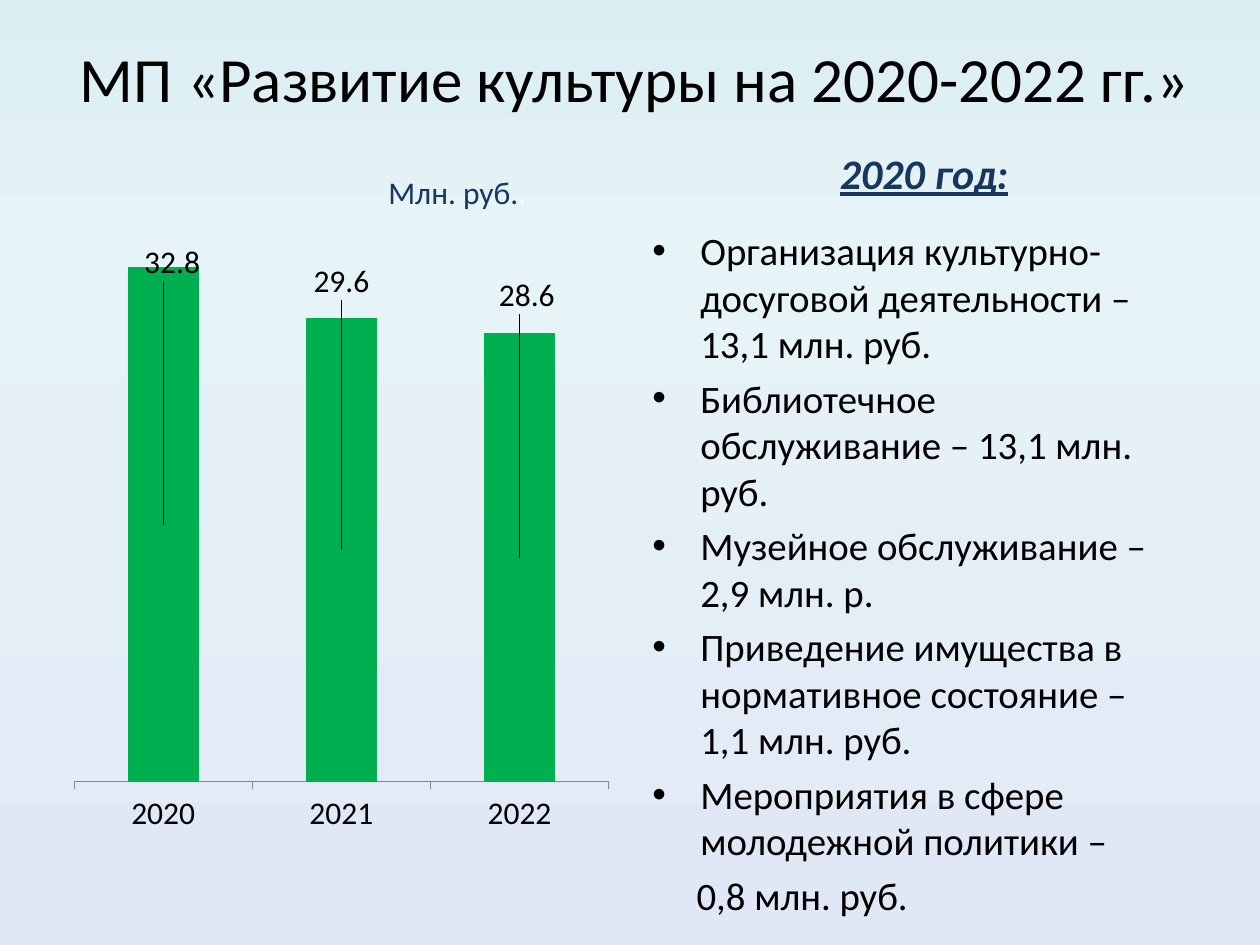
from lxml.etree import SubElement as Sub
from pptx import Presentation
from pptx.chart.data import CategoryChartData as Data
from pptx.dml.color import RGBColor as RGB
from pptx.enum.chart import XL_CHART_TYPE as Kind, XL_LABEL_POSITION as Pos
from pptx.enum.chart import XL_TICK_MARK as Tick
from pptx.enum.text import MSO_ANCHOR as Anchor, PP_ALIGN as Align
from pptx.oxml.ns import qn
from pptx.util import Inches, Pt

FONT = "Calibri"
BLACK = RGB(0x00, 0x00, 0x00)
WHITE = RGB(0xFF, 0xFF, 0xFF)
NAVY = RGB(0x17, 0x37, 0x5E)
GREEN = RGB(0x00, 0xB0, 0x50)
GRAY = RGB(0x86, 0x86, 0x86)
SKY = RGB(0xDB, 0xEE, 0xF4)
PALE = RGB(0xE6, 0xF3, 0xF7)
LILAC = RGB(0xE1, 0xE8, 0xF5)

YEARS = ["2020", "2021", "2022"]
COSTS = [32.8, 29.6, 28.6]
SHIFTS = [(0.016, -0.42), (0, -0.43), (0.013, -0.42)]
ITEMS = [
    "Организация культурно-досуговой деятельности – 13,1 млн. руб.",
    "Библиотечное обслуживание – 13,1 млн. руб.",
    "Музейное обслуживание – 2,9 млн. р.",
    "Приведение имущества в нормативное состояние – 1,1 млн. руб.",
    "Мероприятия в сфере молодежной политики –",
]
LAST = "0,8 млн. руб."


def paint_back(slide):
    fill = slide.background.fill
    fill.gradient()
    fill.gradient_angle = 270
    stops = slide.background._cSld.find(".//" + qn("a:gsLst"))
    for stop in list(stops):
        stops.remove(stop)
    for place, color in ((0, SKY), (25, PALE), (100, LILAC)):
        stop = Sub(stops, qn("a:gs"), pos=str(place * 1000))
        Sub(stop, qn("a:srgbClr"), val=str(color))


def set_font(font, size, color):
    font.name = FONT
    font.size = Pt(size)
    font.color.rgb = color


def add_box(slide, left, top, width, height):
    area = [Inches(n) for n in (left, top, width, height)]
    frame = slide.shapes.add_textbox(*area).text_frame
    frame.word_wrap = True
    return frame


def add_label(slide, area, text, size, color):
    frame = add_box(slide, *area)
    frame.vertical_anchor = Anchor.MIDDLE
    para = frame.paragraphs[0]
    para.alignment = Align.CENTER
    para.add_run().text = text
    set_font(para.font, size, color)
    return para


def add_list(slide, area):
    frame = add_box(slide, *area)
    frame.text = "\n".join(ITEMS + [LAST])
    for para in frame.paragraphs:
        para.space_before = Pt(4.4)
        set_font(para.font, 22.2, BLACK)
        props = para._p.get_or_add_pPr()
        if para.text == LAST:
            props.set("marL", str(Inches(0.35)))
            continue
        props.set("marL", str(Inches(0.38)))
        props.set("indent", str(-Inches(0.38)))
        bullet = props.makeelement(qn("a:buFont"), {"typeface": "Arial"})
        props.find(qn("a:defRPr")).addprevious(bullet)
        mark = props.makeelement(qn("a:buChar"), {"char": "•"})
        bullet.addnext(mark)


def fill_layout(layout, **values):
    for child in list(layout):
        layout.remove(child)
    manual = Sub(layout, qn("c:manualLayout"))
    for name, value in values.items():
        Sub(manual, qn("c:" + name), val=str(value))


def shift_labels(series):
    for point, _ in enumerate(COSTS):
        series.points[point].data_label.position = Pos.CENTER
    for label, (x, y) in zip(series._element.iter(qn("c:dLbl")), SHIFTS):
        layout = label.makeelement(qn("c:layout"), {})
        label.find(qn("c:idx")).addnext(layout)
        fill_layout(layout, x=x, y=y)


def add_bars(slide, area):
    data = Data()
    data.categories = YEARS
    data.add_series("Series 1", COSTS)
    place = [Inches(n) for n in area]
    chart = slide.shapes.add_chart(Kind.COLUMN_STACKED, *place, data).chart
    set_font(chart.font, 18, BLACK)
    chart.has_legend = False
    chart.has_title = False
    axis = chart.value_axis
    axis.minimum_scale = 0
    axis.maximum_scale = 35
    axis.has_major_gridlines = False
    axis.visible = False
    base = chart.category_axis
    base.major_tick_mark = Tick.OUTSIDE
    base.format.line.color.rgb = GRAY
    plot = chart.plots[0]
    plot.gap_width = 150
    plot.overlap = 100
    plot.vary_by_categories = False
    series = plot.series[0]
    series.format.fill.solid()
    series.format.fill.fore_color.rgb = GREEN
    series.data_labels.show_value = True
    shift_labels(series)
    region = chart._chartSpace.find(".//" + qn("c:plotArea"))
    layout = region.find(qn("c:layout"))
    if layout is None:
        layout = region.makeelement(qn("c:layout"), {})
        region.insert(0, layout)
    fill_layout(layout, layoutTarget="inner", xMode="edge", yMode="edge",
                x=0.02, y=0.02, w=0.96, h=0.88)


def main():
    deck = Presentation()
    deck.slide_width = Inches(10)
    deck.slide_height = Inches(7.5)
    slide = deck.slides.add_slide(deck.slide_layouts[6])
    paint_back(slide)
    add_label(slide, (0.25, 0.3, 9.58, 0.62),
              "МП «Развитие культуры на 2020-2022 гг.»", 36, BLACK)
    add_bars(slide, (0.5, 1.75, 4.42, 4.95))
    add_list(slide, (5.08, 1.75, 4.42, 4.95))
    year = add_label(slide, (6.5, 1.08, 1.67, 0.58), "2020 год:", 24, NAVY)
    year.font.bold = year.font.italic = year.font.underline = True
    unit = add_label(slide, (2.92, 1.38, 1.42, 0.29), "Млн. руб.", 18, NAVY)
    dot = unit.add_run()
    dot.text = "."
    dot.font.color.rgb = WHITE
    deck.save("out.pptx")


if __name__ == "__main__":
    main()
